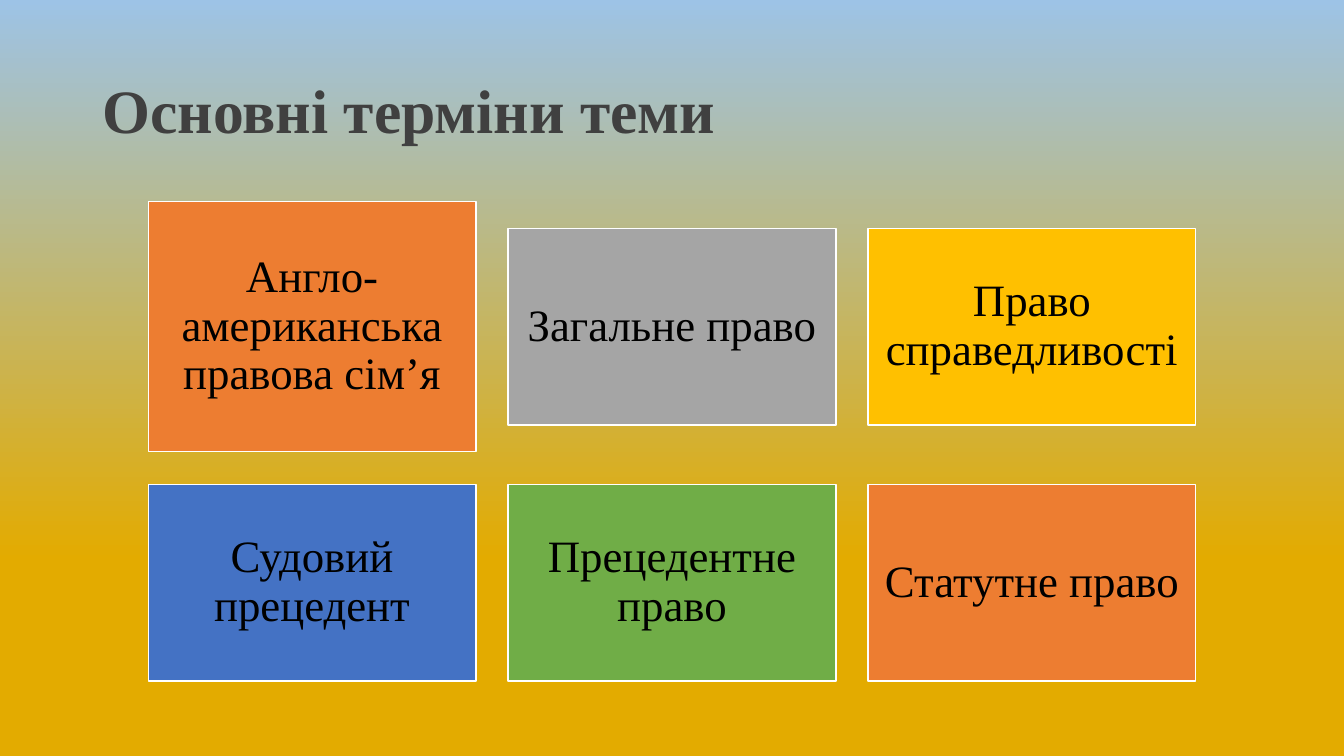
from pptx import Presentation
from pptx.dml.color import RGBColor
from pptx.enum import shapes, text
from pptx.util import Inches, Pt

FONT = "Times New Roman"
GOLD = RGBColor(0xE3, 0xAB, 0x00)
SKY = RGBColor(0x9D, 0xC3, 0xE6)
DARK = RGBColor(0x40, 0x40, 0x40)
BLACK = RGBColor(0, 0, 0)
WHITE = RGBColor(0xFF, 0xFF, 0xFF)
ORANGE = RGBColor(0xED, 0x7D, 0x31)
GRAY = RGBColor(0xA5, 0xA5, 0xA5)
YELLOW = RGBColor(0xFF, 0xC0, 0x00)
BLUE = RGBColor(0x44, 0x72, 0xC4)
GREEN = RGBColor(0x70, 0xAD, 0x47)

# Each row: its middle height, then (term, colour, card height)
ROWS = [
    (3.24, [("Англо-американська правова сім’я", ORANGE, 2.48),
            ("Загальне право", GRAY, 1.95),
            ("Право справедливості", YELLOW, 1.95)]),
    (5.78, [("Судовий прецедент", BLUE, 1.95),
            ("Прецедентне право", GREEN, 1.95),
            ("Статутне право", ORANGE, 1.95)]),
]


def paint_back(slide):
    fill = slide.background.fill
    fill.gradient()
    fill.gradient_angle = 90
    for stop, place, color in zip(fill.gradient_stops, (0.26, 1), (GOLD, SKY)):
        stop.position = place
        stop.color.rgb = color


def write(frame, words, size, color, align, bold=False):
    frame.word_wrap = True
    frame.vertical_anchor = text.MSO_ANCHOR.MIDDLE
    para = frame.paragraphs[0]
    para.alignment = align
    para.line_spacing = 0.9
    run = para.add_run()
    run.text = words
    font = run.font
    font.name, font.size, font.bold = FONT, Pt(size), bold
    font.color.rgb = color


def add_title(slide, left, top, width, height):
    box = slide.shapes.add_textbox(
        Inches(left), Inches(top), Inches(width), Inches(height))
    write(box.text_frame, "Основні терміни теми", 44, DARK,
          text.PP_ALIGN.LEFT, bold=True)


def add_card(slide, left, top, width, height, term, color):
    card = slide.shapes.add_shape(
        shapes.MSO_SHAPE.RECTANGLE,
        Inches(left), Inches(top), Inches(width), Inches(height))
    card.shadow.inherit = False
    card.fill.solid()
    card.fill.fore_color.rgb = color
    card.line.color.rgb = WHITE
    card.line.width = Pt(1)
    frame = card.text_frame
    frame.margin_left = frame.margin_right = Inches(0.13)
    frame.margin_top = frame.margin_bottom = Inches(0.13)
    write(frame, term, 32, BLACK, text.PP_ALIGN.CENTER)


def add_terms(slide, left, width, gap):
    """Place the cards in columns, each centred on the middle of its row."""
    for middle, cards in ROWS:
        for col, (term, color, height) in enumerate(cards):
            add_card(slide, left + col * (width + gap), middle - height / 2,
                     width, height, term, color)


def main():
    deck = Presentation()
    deck.slide_width, deck.slide_height = Inches(13.33), Inches(7.5)
    slide = deck.slides.add_slide(deck.slide_layouts[6])
    paint_back(slide)
    add_title(slide, 0.92, 0.4, 11.5, 1.45)
    add_terms(slide, 1.47, 3.25, 0.32)
    deck.save("out.pptx")


if __name__ == "__main__":
    main()
